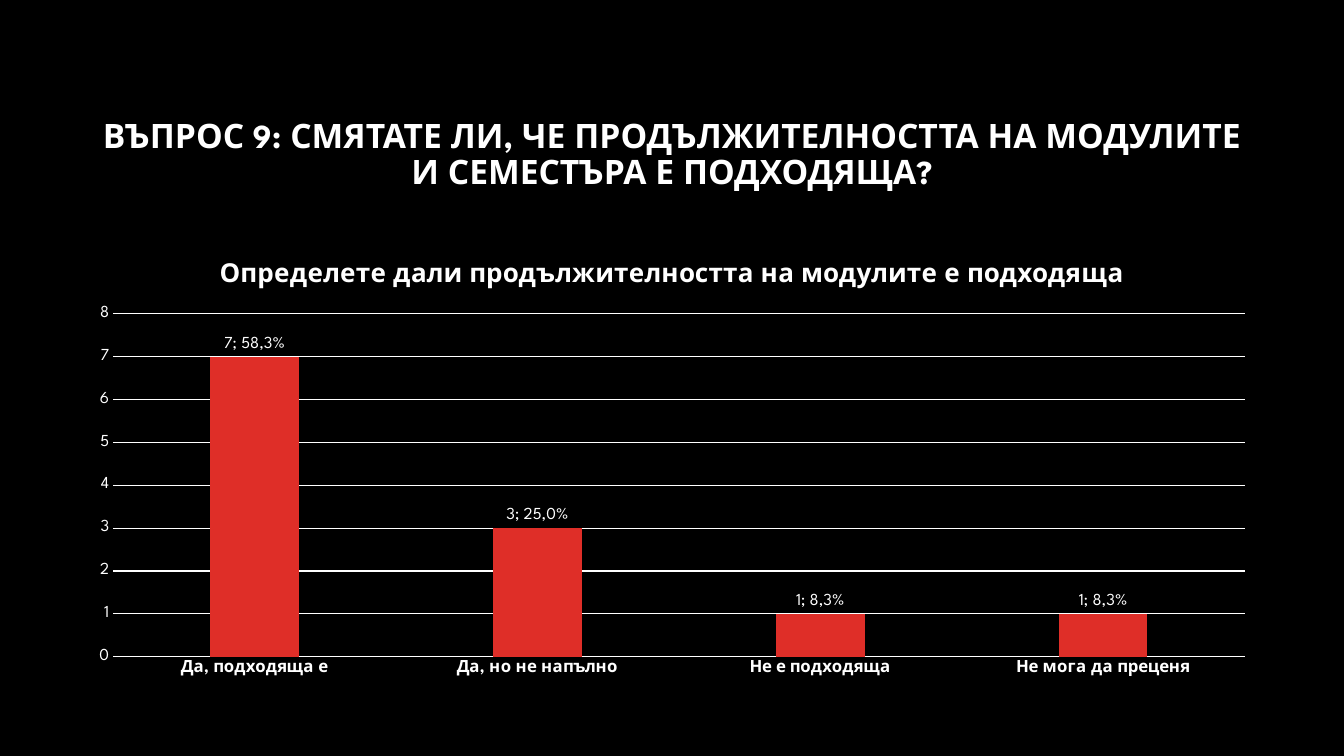
from pptx import Presentation
from pptx import util as u
from pptx.chart.data import CategoryChartData
from pptx.dml.color import RGBColor
from pptx.enum import chart as ch, text

FONT = "League Spartan"
COLORS = {"background": "000000", "ink": "FFFFFF", "bar": "DF2E28"}
WIDTH, HEIGHT = u.Inches(13.33), u.Inches(7.5)
MARGIN = u.Inches(0.75)
QUESTION = "ВЪПРОС 9: СМЯТАТЕ ЛИ, ЧЕ ПРОДЪЛЖИТЕЛНОСТТА НА МОДУЛИТЕ И СЕМЕСТЪРА Е ПОДХОДЯЩА?"
CHART_TITLE = "Определете дали продължителността на модулите е подходяща"
ANSWERS = [
    ("Да, подходяща е", 7, "58,3%"),
    ("Да, но не напълно", 3, "25,0%"),
    ("Не е подходяща", 1, "8,3%"),
    ("Не мога да преценя", 1, "8,3%"),
]


def color(key):
    return RGBColor.from_string(COLORS[key])


def style(font, size, bold=False):
    font.name = FONT
    font.size = u.Pt(size)
    font.bold = bold
    font.color.rgb = color("ink")


def style_line(line):
    line.color.rgb = color("ink")
    line.width = u.Pt(0.75)


def add_run(paragraph, words, size, bold=False):
    run = paragraph.add_run()
    run.text = words
    style(run.font, size, bold)


def add_question(slide):
    question = slide.shapes.title
    question.left, question.top = MARGIN, u.Inches(0.84)
    question.width, question.height = WIDTH - 2 * MARGIN, u.Inches(1.41)
    frame = question.text_frame
    frame.word_wrap = True
    frame.auto_size = text.MSO_AUTO_SIZE.NONE
    frame.vertical_anchor = text.MSO_ANCHOR.MIDDLE
    paragraph = frame.paragraphs[0]
    paragraph.alignment = text.PP_ALIGN.CENTER
    paragraph.line_spacing = 0.9
    add_run(paragraph, QUESTION, 24, True)


def style_axes(chart):
    answers, votes = chart.category_axis, chart.value_axis
    for axis in (answers, votes):
        axis.major_tick_mark = axis.minor_tick_mark = ch.XL_TICK_MARK.NONE
        style(axis.tick_labels.font, 12, axis is answers)
    style_line(answers.format.line)
    votes.minimum_scale, votes.maximum_scale, votes.major_unit = 0, 8, 1
    votes.format.line.fill.background()
    votes.has_major_gridlines = True
    style_line(votes.major_gridlines.format.line)


def style_bars(plot):
    plot.gap_width, plot.overlap = 219, -27
    plot.vary_by_categories = False
    bars = plot.series[0]
    bars.format.fill.solid()
    bars.format.fill.fore_color.rgb = color("bar")
    labels = bars.data_labels
    labels.show_value = True
    labels.position = ch.XL_LABEL_POSITION.OUTSIDE_END
    style(labels.font, 12)
    for index, (_, count, share) in enumerate(ANSWERS):
        label = bars.points[index].data_label
        add_run(label.text_frame.paragraphs[0], f"{count}; {share}", 12)
        label.position = ch.XL_LABEL_POSITION.OUTSIDE_END


def add_answers_chart(slide):
    data = CategoryChartData()
    data.categories = [answer for answer, _, _ in ANSWERS]
    data.add_series(CHART_TITLE, [count for _, count, _ in ANSWERS])
    chart = slide.shapes.add_chart(
        ch.XL_CHART_TYPE.COLUMN_CLUSTERED, MARGIN, u.Inches(2.4),
        WIDTH - 2 * MARGIN, u.Inches(4.4), data).chart
    style(chart.font, 10)
    chart.has_legend = False
    chart.has_title = True
    add_run(chart.chart_title.text_frame.paragraphs[0], CHART_TITLE, 18.6, True)
    chart.chart_title.include_in_layout = False
    style_axes(chart)
    style_bars(chart.plots[0])


def main():
    deck = Presentation()
    deck.slide_width, deck.slide_height = WIDTH, HEIGHT
    slide = deck.slides.add_slide(deck.slide_layouts[5])
    slide.background.fill.solid()
    slide.background.fill.fore_color.rgb = color("background")
    add_question(slide)
    add_answers_chart(slide)
    deck.save("out.pptx")


if __name__ == "__main__":
    main()
